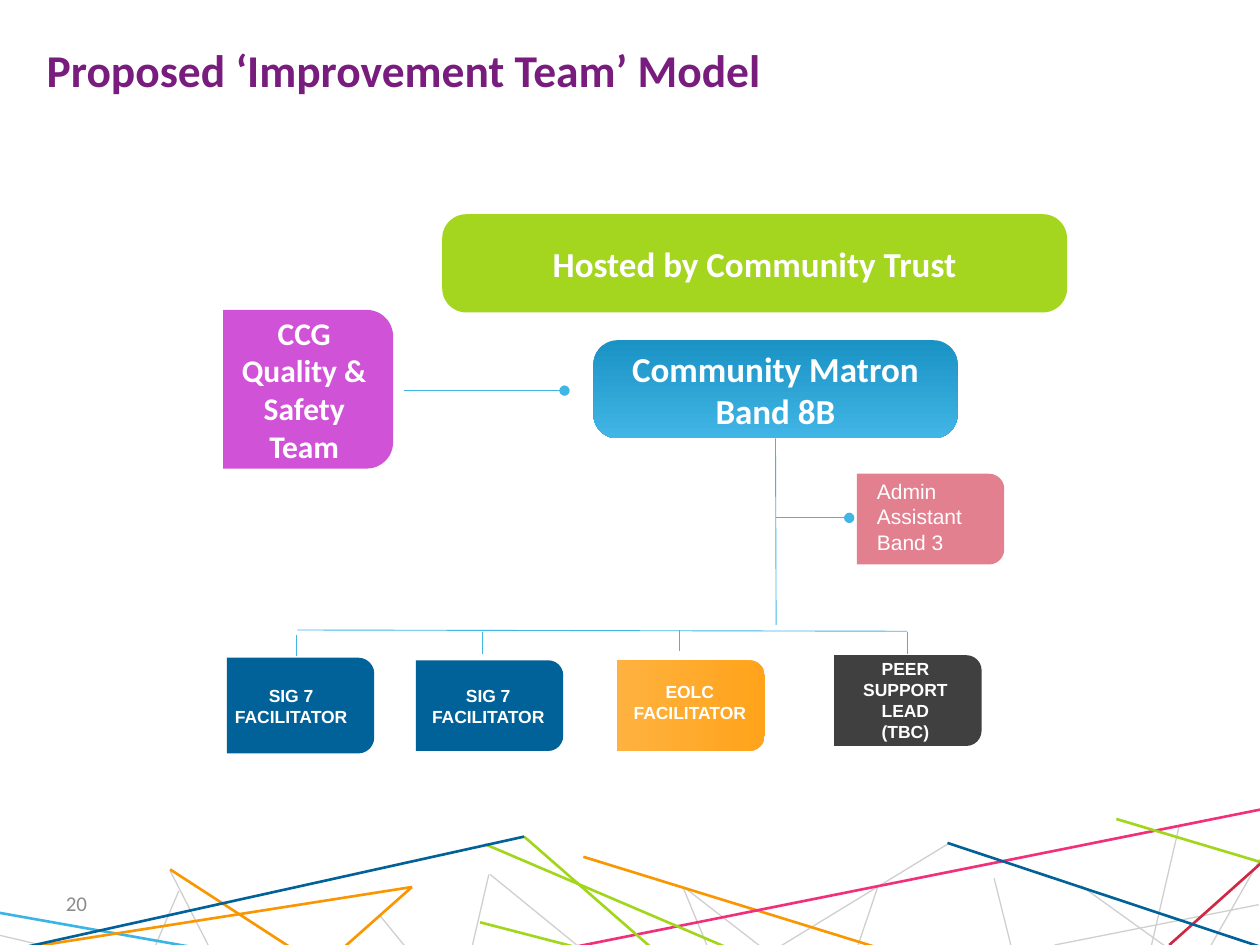
from lxml import etree
from pptx import Presentation
from pptx import util as u
from pptx.dml import color
from pptx.enum import shapes, text
from pptx.oxml import ns

COLORS = {
    "title": "781D7D", "number": "8C8C8C", "white": "FFFFFF", "link": "41B6E6",
    "host": "A4D620", "matron": "1A92C4", "ccg": "D052D7", "admin": "E38090",
    "sig": "006298", "eolc": "FFA31A", "eolc_light": "FFB240", "peer": "404040",
    "grey": "D0CFCF", "sky": "3CB4E5", "orange": "F99600", "pink": "F32F79",
    "lime": "A2D61B", "navy": "006298", "red": "CE2843",
}

STRANDS = [
    ("grey", [
        (9.36, 6.55, 9.13, 7.54), (5.44, 7.05, 6.37, 7.77), (5.42, 7.04, 5.75, 7.84),
        (6.97, 7.03, 6.76, 7.65), (7.52, 6.7, 5.98, 7.64), (9.99, 7.18, 8.37, 7.5),
        (10, 6.82, 9.59, 7.54), (8.58, 7.03, 9.61, 7.77), (-0.74, 7.25, 1.05, 7.67),
        (1.42, 7.07, 1.09, 7.84), (1.35, 6.91, 1.79, 7.77), (3.01, 7.26, 3.41, 7.75),
        (3.89, 6.94, 4.97, 7.82), (3.88, 6.94, 3.65, 7.93)]),
    ("sky", [(-0.2, 7.21, 2.95, 7.77)]),
    ("orange", [(1.35, 6.9, 2.8, 7.84), (3.27, 7.04, -1.25, 7.75),
                (3.27, 7.04, 2.48, 7.74), (4.63, 6.8, 7.74, 7.76)]),
    ("pink", [(10.28, 6.37, 3.29, 7.77)]),
    ("lime", [(4.16, 6.64, 5.42, 7.74), (3.81, 7.32, 5.43, 7.74), (10.2, 6.9, 8.86, 6.5)]),
    ("grey", [(7.89, 6.97, 8.08, 7.73)]),
    ("red", [(10.02, 6.84, 9.28, 7.5)]),
    ("navy", [(7.52, 6.69, 10.05, 7.53)]),
    ("lime", [(3.85, 6.7, 5.84, 7.55)]),
    ("navy", [(4.16, 6.64, -0.81, 7.74)]),
]

FACILITATORS = [
    ((1.8, 5.22, 1.17, 0.76), "sig", (1.82, 5.3, 0.98, 0.61), "SIG 7 FACILITATOR"),
    ((3.3, 5.24, 1.17, 0.72), "sig", (3.36, 5.41, 1.03, 0.39), "SIG 7 FACILITATOR"),
    ((4.9, 5.24, 1.17, 0.72), ("eolc", "eolc_light"), (4.96, 5.34, 1.03, 0.46),
     "EOLC FACILITATOR"),
    ((6.62, 5.2, 1.17, 0.72), "peer", (6.74, 5.38, 0.89, 0.35),
     "PEER SUPPORT LEAD\n(TBC)"),
]
DROPS = [(2.35, 5.04), (3.83, 5.02), (5.39, 5), (7.2, 5.02)]


def rgb(name):
    return color.RGBColor.from_string(COLORS[name])


def inches(box):
    return [u.Inches(length) for length in box]


def write(frame, words, size, font="Arial", ink="white", bold=True,
          align=text.PP_ALIGN.CENTER, anchor=text.MSO_ANCHOR.MIDDLE, insets=(0, 0, 0, 0)):
    frame.text = words
    frame.word_wrap = True
    frame.auto_size = text.MSO_AUTO_SIZE.NONE
    frame.vertical_anchor = anchor
    (frame.margin_left, frame.margin_top,
     frame.margin_right, frame.margin_bottom) = inches(insets)
    for paragraph in frame.paragraphs:
        paragraph.alignment = align
        for run in paragraph.runs:
            run.font.name = font
            run.font.size = u.Pt(size)
            run.font.bold = bold
            run.font.color.rgb = rgb(ink)


def paint(shape, fill):
    shape.shadow.inherit = False
    shape.line.fill.background()
    if isinstance(fill, str):
        shape.fill.solid()
        shape.fill.fore_color.rgb = rgb(fill)
        return
    shape.fill.gradient()
    shape.fill.gradient_angle = 270
    for stop, name in zip(shape.fill.gradient_stops, fill):
        stop.color.rgb = rgb(name)


def add_line(slide, ends, ink="link", width=0.5, dot=False):
    line = slide.shapes.add_connector(shapes.MSO_CONNECTOR.STRAIGHT, *inches(ends))
    line.line.color.rgb = rgb(ink)
    line.line.width = u.Pt(width)
    properties = line._element.spPr
    if dot:
        etree.SubElement(properties.find(ns.qn("a:ln")), ns.qn("a:tailEnd"), type="oval")
    etree.SubElement(properties, ns.qn("a:effectLst"))
    return line


def add_label(slide, box, words, size, **style):
    label = slide.shapes.add_textbox(*inches(box))
    write(label.text_frame, words, size, **style)


def add_bar(slide, box, fill, words):
    bar = slide.shapes.add_shape(shapes.MSO_SHAPE.ROUNDED_RECTANGLE, *inches(box))
    bar.adjustments[0] = 0.246
    paint(bar, fill)
    write(bar.text_frame, words, 20, font="Calibri")
    return bar


def add_card(slide, box, fill):
    left, top, width, height = box
    shift = (width - height) / 2
    card = slide.shapes.add_shape(shapes.MSO_SHAPE.ROUND_2_SAME_RECTANGLE,
                                  *inches((left + shift, top - shift, height, width)))
    card.rotation = 90
    paint(card, fill)
    return card


def add_strands(slide):
    for ink, strands in STRANDS:
        for ends in strands:
            add_line(slide, ends, ink, 0.75 if ink == "grey" else 1.5)


def add_heading(slide, box):
    title = slide.shapes.title
    title.left, title.top, title.width, title.height = inches(box)
    write(title.text_frame, "Proposed ‘Improvement Team’ Model", 26, font="Calibri",
          ink="title", align=text.PP_ALIGN.LEFT, anchor=text.MSO_ANCHOR.TOP,
          insets=(0.1, 0.05, 0.1, 0.05))


def add_leadership(slide):
    add_bar(slide, (3.51, 1.7, 4.96, 0.78), "host", "Hosted by Community Trust")
    matron = add_bar(slide, (4.71, 2.7, 2.89, 0.78), ("matron", "link"),
                     "Community Matron\nBand 8B")
    ccg = add_card(slide, (1.77, 2.46, 1.35, 1.26), "ccg")
    write(ccg.text_frame, "CCG Quality & Safety Team", 18, font="Calibri",
          insets=(0.1, 0.07, 0.1, 0.07))
    ccg.text_frame._txBody.bodyPr.set("vert", "vert270")
    add_line(slide, (3.21, 3.1, 4.48, 3.1), dot=True)
    return matron


def add_admin(slide, box):
    add_card(slide, box, "admin")
    add_label(slide, (6.83, 3.87, 1.12, 0.46), "Admin Assistant Band 3", 12, bold=False,
              align=text.PP_ALIGN.LEFT, insets=(0.13, 0, 0, 0))
    add_line(slide, (6.16, 4.11, 6.74, 4.11), dot=True)


def add_facilitators(slide, matron):
    trunk = add_line(slide, (6.16, 3.48, 6.16, 4.96))
    trunk.begin_connect(matron, 2)
    add_line(slide, (2.36, 5, 7.2, 5.01))
    for x, top in DROPS:
        add_line(slide, (x, top, x, top + 0.17))
    for box, fill, label_box, role in FACILITATORS:
        add_card(slide, box, fill)
        add_label(slide, label_box, role, 10)


def main():
    deck = Presentation()
    deck.slide_width, deck.slide_height = inches((10, 7.5))
    slide = deck.slides.add_slide(deck.slide_layouts[5])
    add_strands(slide)
    add_label(slide, (0.16, 6.97, 0.63, 0.4), "20", 12, font="Calibri", ink="number",
              bold=False, align=text.PP_ALIGN.RIGHT, insets=(0.1, 0.05, 0.1, 0.05))
    add_heading(slide, (0.27, 0.28, 7.48, 0.63))
    matron = add_leadership(slide)
    add_admin(slide, (6.8, 3.76, 1.17, 0.72))
    add_facilitators(slide, matron)
    deck.save("out.pptx")


if __name__ == "__main__":
    main()
